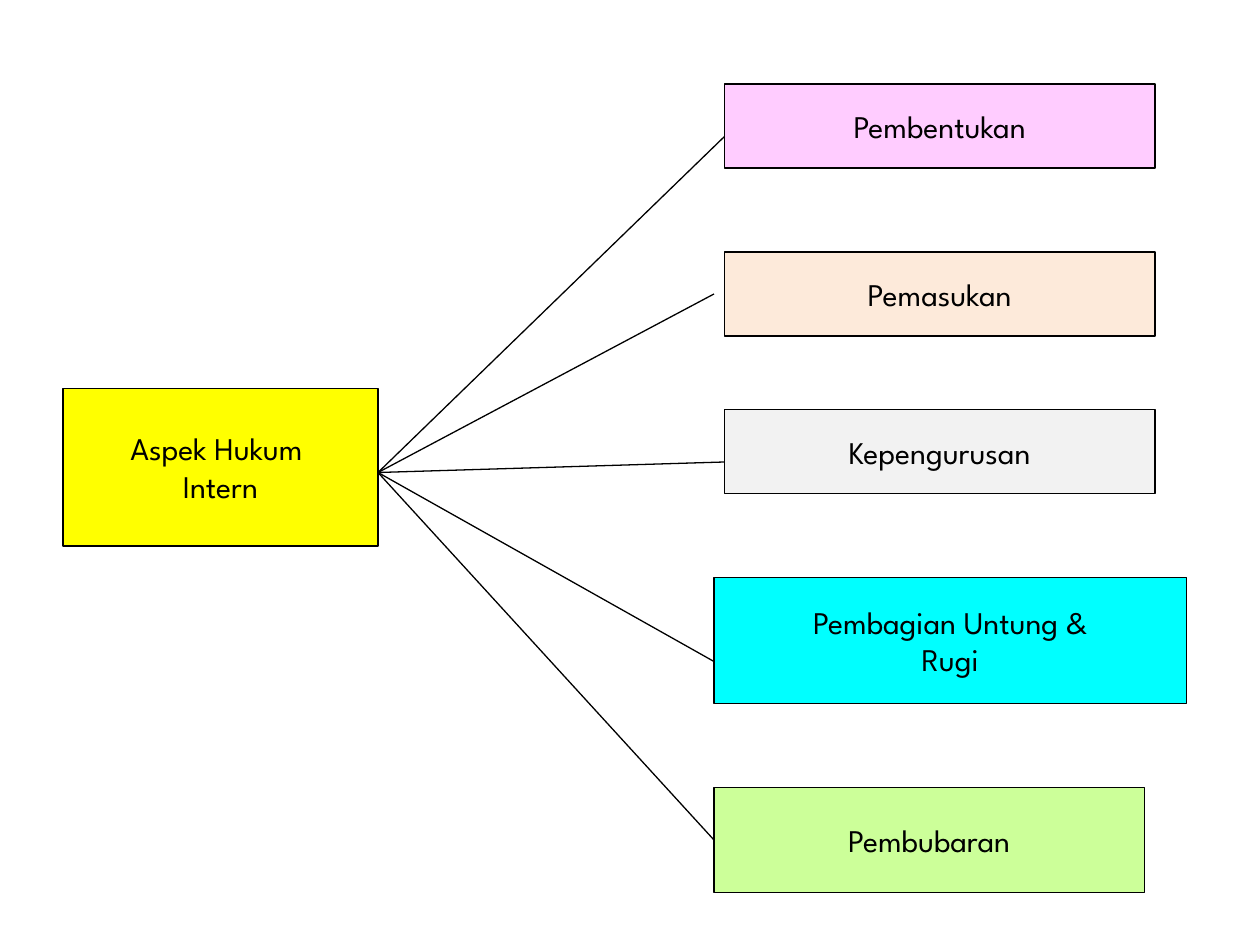
from lxml import etree
from pptx import Presentation, util as u
from pptx.dml.color import RGBColor
from pptx.enum import shapes, text
from pptx.oxml.ns import qn

COLUMNS, ROWS = 120, 90
FONT = "League Spartan"
BLACK = "000000"

ROOT = ("Aspek Hukum \nIntern", "FFFF00", (6, 37, 30, 15))
HUB = (36, 45)
BRANCHES = [
    ("Pembentukan", "FFCCFF", (69, 8, 41, 8), (69, 13)),
    ("Pemasukan", "FDEADA", (69, 24, 41, 8), (68, 28)),
    ("Kepengurusan", "F2F2F2", (69, 39, 41, 8), (69, 44)),
    ("Pembagian Untung &\nRugi", "00FFFF", (68, 55, 45, 12), (68, 63)),
    ("Pembubaran", "CCFF99", (68, 75, 41, 10), (68, 80)),
]

presentation = Presentation()
presentation.slide_width = u.Inches(10)
presentation.slide_height = u.Inches(7.5)
slide = presentation.slides.add_slide(presentation.slide_layouts[6])


def color(value):
    return RGBColor.from_string(value)


def across(columns):
    return round(presentation.slide_width * columns / COLUMNS)


def down(rows):
    return round(presentation.slide_height * rows / ROWS)


def style_line(line):
    line.color.rgb = color(BLACK)
    line.width = u.Pt(0.75)


def add_box(label, fill, place):
    left, top, width, height = place
    shape = slide.shapes.add_shape(
        shapes.MSO_SHAPE.RECTANGLE,
        across(left), down(top), across(width), down(height))
    shape.shadow.inherit = False
    shape.fill.solid()
    shape.fill.fore_color.rgb = color(fill)
    style_line(shape.line)
    frame = shape.text_frame
    frame.word_wrap = False
    frame.vertical_anchor = text.MSO_ANCHOR.MIDDLE
    frame.text = label
    for paragraph in frame.paragraphs:
        paragraph.alignment = text.PP_ALIGN.CENTER
        paragraph.font.name = FONT
        paragraph.font.size = u.Pt(18)
        paragraph.font.color.rgb = color(BLACK)


def add_link(start, end):
    connector = slide.shapes.add_connector(
        shapes.MSO_CONNECTOR.STRAIGHT,
        across(start[0]), down(start[1]), across(end[0]), down(end[1]))
    style_line(connector.line)
    etree.SubElement(connector._element.spPr, qn("a:effectLst"))


add_box(*ROOT)
for label, fill, place, _ in BRANCHES:
    add_box(label, fill, place)
for *_, end in BRANCHES:
    add_link(HUB, end)

presentation.save("out.pptx")
